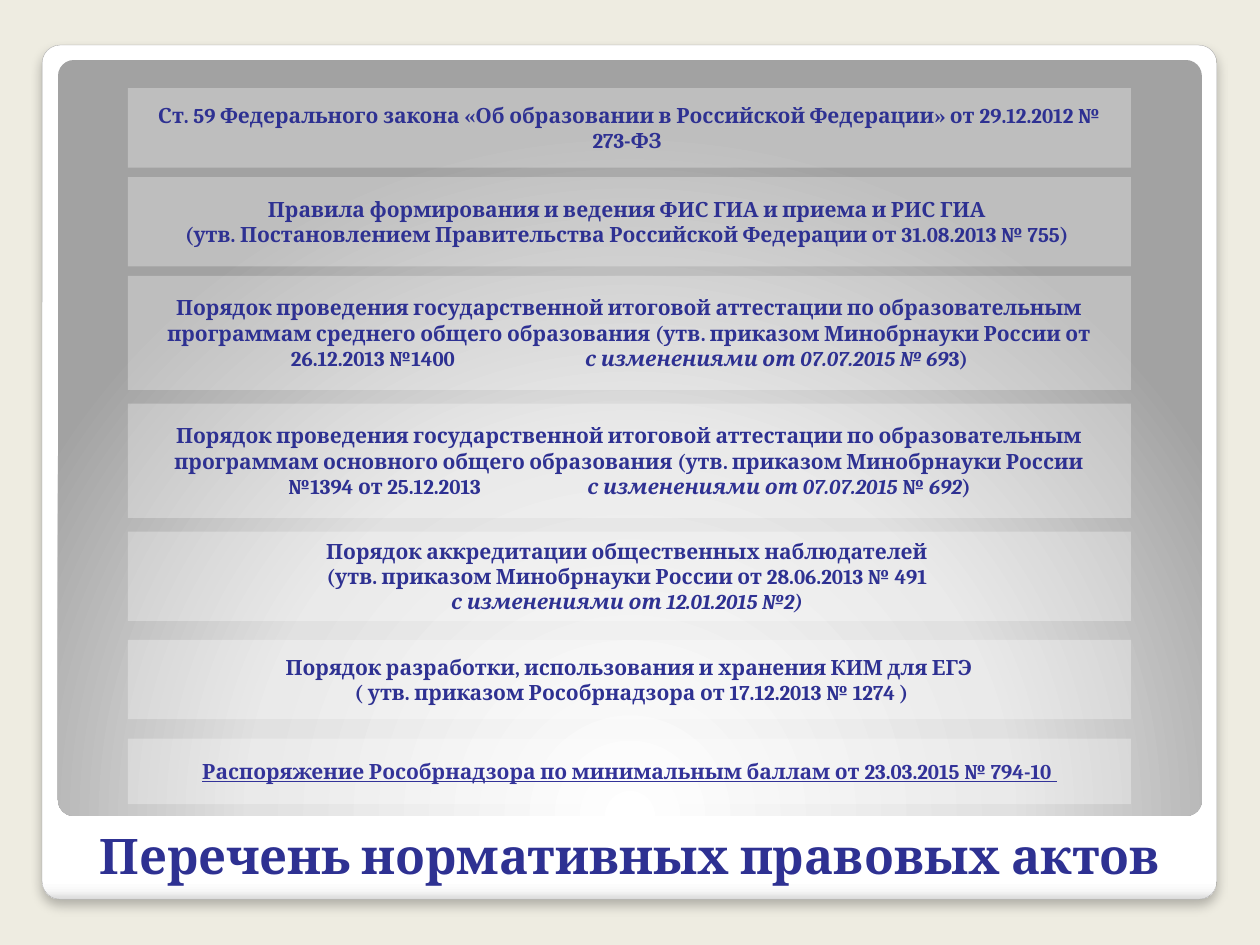
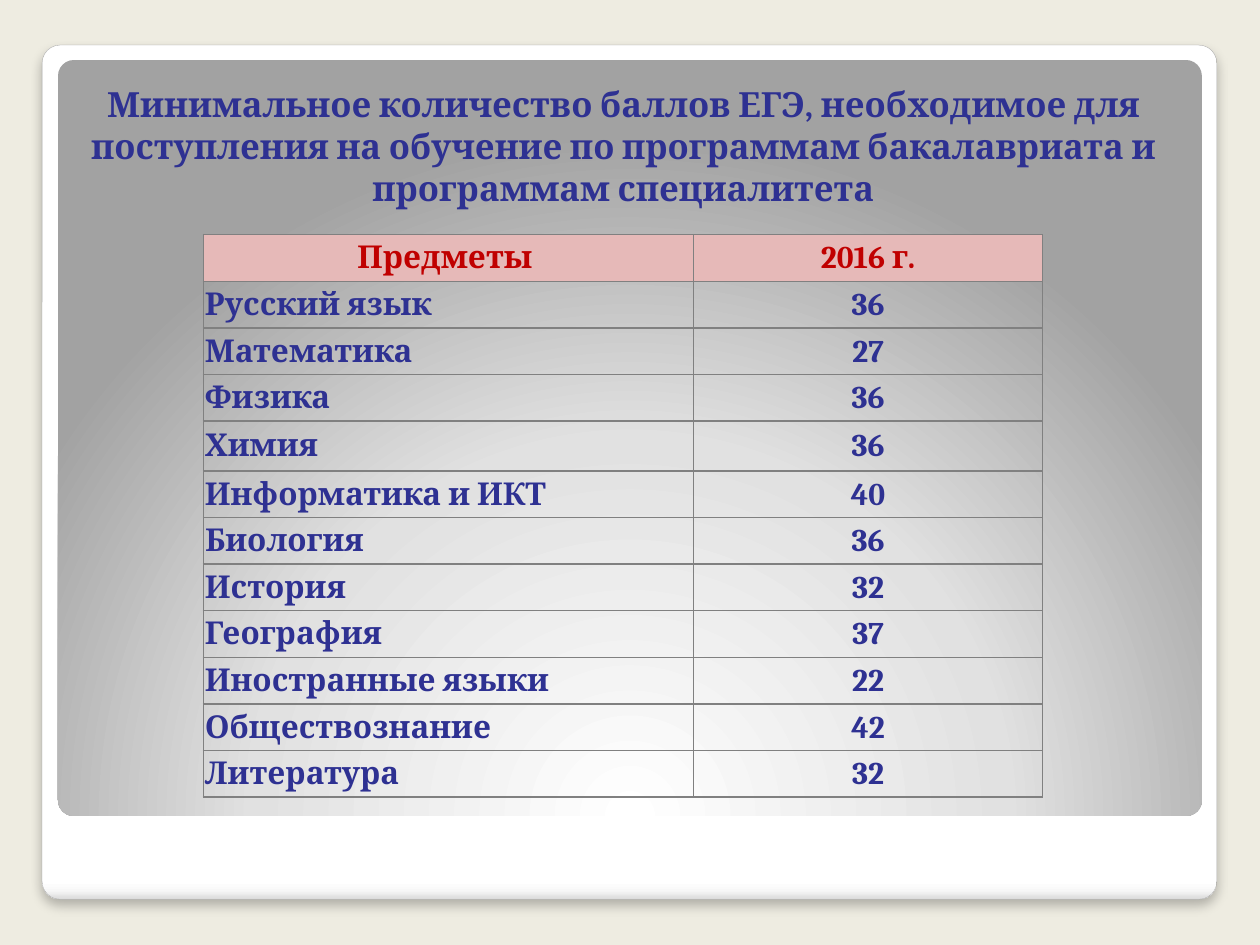
from dataclasses import dataclass
from typing import NamedTuple

from lxml import etree
from pptx import Presentation
from pptx.dml.color import RGBColor
from pptx.enum import shapes, text
from pptx.oxml import parse_xml
from pptx.oxml.ns import nsdecls, qn
from pptx.util import Cm, Pt


@dataclass(frozen=True)
class Theme:
    font: str = "Cambria"
    page: str = "EEECE1"
    white: str = "FFFFFF"
    ink: str = "2E3192"
    link_ink: str = "333399"
    header_ink: str = "C00000"
    header_fill: str = "E6B9B8"
    grid: str = "808080"
    frame_line: str = "A4A4A4"
    frame_stops: tuple = ((0, "FFFFFF"), (98, "FFFFFF"), (99, "F7F7F7"), (100, "DADADA"))
    panel_stops: tuple = ((0, "FFFFFF"), (55, "E1E1E1"), (100, "A2A2A2"))
    card_size: float = 12
    table_size: float = 18
    heading_size: float = 19.8
    title_size: float = 28


class Box(NamedTuple):
    """Left, top, width and height in centimetres."""
    left: float
    top: float
    width: float
    height: float

    def lengths(self) -> list:
        return [Cm(v) for v in self]


class Run(NamedTuple):
    text: str
    italic: bool = False
    underline: bool = False
    color: str = ""


class Act(NamedTuple):
    """A card: its place, its paragraphs of runs, and an optional tab stop in cm."""
    top: float
    height: float
    paragraphs: list
    tab: float = 0


T = Theme()
CARD_LEFT, CARD_WIDTH = 2.58, 20.22
FRAME = Box(0.85, 0.91, 23.68, 17.22)
PANEL = Box(1.17, 1.21, 23.06, 15.24)
TITLE = Box(1.5, 16.51, 22.63, 1.45)
HEADING = Box(1.3, 1.73, 22.53, 2.59)
TABLE = Box(4.1, 4.73, 16.92, 11.34)
COLUMNS = (9.88, 7.04)
ROW_HEIGHT, CHEMISTRY_HEIGHT = 0.94, 1.0

ACTS = [
    Act(1.78, 1.6, [[Run("Ст. 59 Федерального закона «Об образовании в Российской Федерации» "
                         "от 29.12.2012 № 273-ФЗ ")]]),
    Act(3.57, 1.8, [[Run("Правила формирования и ведения ФИС ГИА и приема и РИС ГИА ")],
                    [Run("(утв. Постановлением Правительства Российской Федерации "
                         "от 31.08.2013 № 755) ")]]),
    Act(5.56, 2.3, [[Run("Порядок проведения государственной итоговой аттестации по "
                         "образовательным программам среднего общего образования "
                         "(утв. приказом Минобрнауки России от 26.12.2013 №1400\t"),
                     Run("с изменениями от 07.07.2015 № 69", italic=True), Run("3)")]], tab=5.93),
    Act(8.14, 2.3, [[Run("Порядок проведения государственной итоговой аттестации по "
                         "образовательным программам основного общего образования "
                         "(утв. приказом Минобрнауки России №1394 от 25.12.2013\t"),
                     Run("с изменениями от 07.07.2015 ", italic=True), Run("№ "),
                     Run("692", italic=True), Run(")")]], tab=6.03),
    Act(10.72, 1.8, [[Run("Порядок аккредитации общественных наблюдателей ")],
                     [Run("(утв. приказом Минобрнауки России от 28.06.2013 № 491 ")],
                     [Run("с изменениями от 12.01.2015 №2) ", italic=True)]]),
    Act(12.9, 1.6, [[Run("Порядок разработки, использования и хранения КИМ для ЕГЭ")],
                    [Run(" ( утв. приказом Рособрнадзора от 17.12.2013 № 1274 )")]]),
    Act(14.89, 1.32, [[Run("Распоряжение Рособрнадзора по минимальным баллам "
                           "от 23.03.2015 № 794-10 ", underline=True, color=T.link_ink)]]),
]

SCORES = [
    ("Русский язык", 36), ("Математика", 27), ("Физика", 36), ("Химия", 36),
    ("Информатика и ИКТ", 40), ("Биология", 36), ("История", 32), ("География", 37),
    ("Иностранные языки", 22), ("Обществознание", 42), ("Литература", 32),
]


def rgb(color: str) -> RGBColor:
    return RGBColor.from_string(color)


def write(tf, paragraphs: list, *, size: float, color: str = T.ink, tab: float = 0,
          align=text.PP_ALIGN.CENTER, anchor=None) -> None:
    """Fill a text frame with paragraphs, each one a list of runs."""
    tf.word_wrap = True
    if anchor is not None:
        tf.vertical_anchor = anchor
    for i, runs in enumerate(paragraphs):
        p = tf.paragraphs[0] if i == 0 else tf.add_paragraph()
        p.alignment = align
        if tab:
            stops = etree.SubElement(p._p.get_or_add_pPr(), qn("a:tabLst"))
            etree.SubElement(stops, qn("a:tab"), pos=str(Cm(tab)), algn="l")
        for run in runs:
            r = p.add_run()
            r.text = run.text
            f = r.font
            f.name, f.size, f.bold = T.font, Pt(size), True
            f.italic, f.underline = run.italic, run.underline
            f.color.rgb = rgb(run.color or color)


def add_box(s, kind, box: Box):
    sp = s.shapes.add_shape(kind, *box.lengths())
    sp.shadow.inherit = False
    sp.line.fill.background()
    return sp


def set_gradient(sp, stops: tuple, direction: str) -> None:
    """Put a gradient right after the geometry; direction is a:lin or a:path markup."""
    marks = "".join(f'<a:gs pos="{pos * 1000}"><a:srgbClr val="{color}"/></a:gs>'
                    for pos, color in stops)
    sp._element.spPr.insert(2, parse_xml(
        f'<a:gradFill {nsdecls("a")} rotWithShape="1"><a:gsLst>{marks}</a:gsLst>'
        f'{direction}</a:gradFill>'))


def add_slide(prs):
    """Add a blank slide with the background, the white frame and the grey panel."""
    s = prs.slides.add_slide(prs.slide_layouts[6])
    s.background.fill.solid()
    s.background.fill.fore_color.rgb = rgb(T.page)

    frame = add_box(s, shapes.MSO_SHAPE.ROUNDED_RECTANGLE, FRAME)
    set_gradient(frame, T.frame_stops, '<a:lin ang="5400000" scaled="0"/>')
    frame.line.color.rgb = rgb(T.frame_line)
    frame.line.width = Pt(0.16)
    frame._element.spPr.find(qn("a:effectLst")).append(parse_xml(
        f'<a:outerShdw {nsdecls("a")} blurRad="{Pt(6)}" dist="{Pt(4)}" dir="5400000" '
        'algn="t" rotWithShape="0"><a:srgbClr val="000000"><a:alpha val="25000"/>'
        '</a:srgbClr></a:outerShdw>'))

    panel = add_box(s, shapes.MSO_SHAPE.ROUNDED_RECTANGLE, PANEL)
    set_gradient(panel, T.panel_stops, '<a:path path="circle"><a:fillToRect l="50000" '
                 't="175000" r="50000" b="-75000"/></a:path>')
    for sp in (frame, panel):
        sp.adjustments[0] = 0.021
    return s


def add_text(s, box: Box, words: str, *, size: float, anchor=text.MSO_ANCHOR.TOP) -> None:
    tb = s.shapes.add_textbox(*box.lengths())
    write(tb.text_frame, [[Run(words)]], size=size, anchor=anchor)


def add_act(s, act: Act) -> None:
    sp = add_box(s, shapes.MSO_SHAPE.RECTANGLE, Box(CARD_LEFT, act.top, CARD_WIDTH, act.height))
    sp.fill.solid()
    sp.fill.fore_color.rgb = rgb(T.white)
    fill_color = sp._element.spPr.find(qn("a:solidFill"))[0]
    etree.SubElement(fill_color, qn("a:alpha"), val="31000")
    write(sp.text_frame, act.paragraphs, size=T.card_size, tab=act.tab,
          anchor=text.MSO_ANCHOR.MIDDLE)


def set_borders(cell) -> None:
    tc_pr = cell._tc.get_or_add_tcPr()
    for i, side in enumerate(("lnL", "lnR", "lnT", "lnB")):
        tc_pr.insert(i, parse_xml(
            f'<a:{side} {nsdecls("a")} w="{Pt(1)}"><a:solidFill><a:srgbClr val="{T.grid}"/>'
            f'</a:solidFill></a:{side}>'))


def add_scores(s) -> None:
    rows = [("Предметы ", "2016 г."), *SCORES]
    table = s.shapes.add_table(len(rows), len(COLUMNS), *TABLE.lengths()).table
    table.first_row = table.horz_banding = False
    for column, width in zip(table.columns, COLUMNS):
        column.width = Cm(width)
    for i, values in enumerate(rows):
        header = i == 0
        table.rows[i].height = Cm(CHEMISTRY_HEIGHT if values[0] == "Химия" else ROW_HEIGHT)
        for j, value in enumerate(values):
            cell = table.cell(i, j)
            cell.margin_left = cell.margin_right = cell.margin_top = Cm(0.03)
            cell.margin_bottom = 0
            cell.vertical_anchor = text.MSO_ANCHOR.MIDDLE
            if header:
                cell.fill.solid()
                cell.fill.fore_color.rgb = rgb(T.header_fill)
            else:
                cell.fill.background()
            set_borders(cell)
            centred = header or j == 1
            write(cell.text_frame, [[Run(str(value))]], size=T.table_size,
                  color=T.header_ink if header else T.ink,
                  align=text.PP_ALIGN.CENTER if centred else text.PP_ALIGN.LEFT)


def main() -> None:
    prs = Presentation()
    prs.slide_width, prs.slide_height = Cm(25.4), Cm(19.05)

    s = add_slide(prs)
    for act in ACTS:
        add_act(s, act)
    add_text(s, TITLE, "Перечень нормативных правовых актов ", size=T.title_size)

    s = add_slide(prs)
    add_scores(s)
    add_text(s, HEADING, "Минимальное количество баллов ЕГЭ, необходимое для поступления "
             "на обучение по программам бакалавриата и программам специалитета",
             size=T.heading_size, anchor=text.MSO_ANCHOR.BOTTOM)

    prs.save("out.pptx")


if __name__ == "__main__":
    main()
